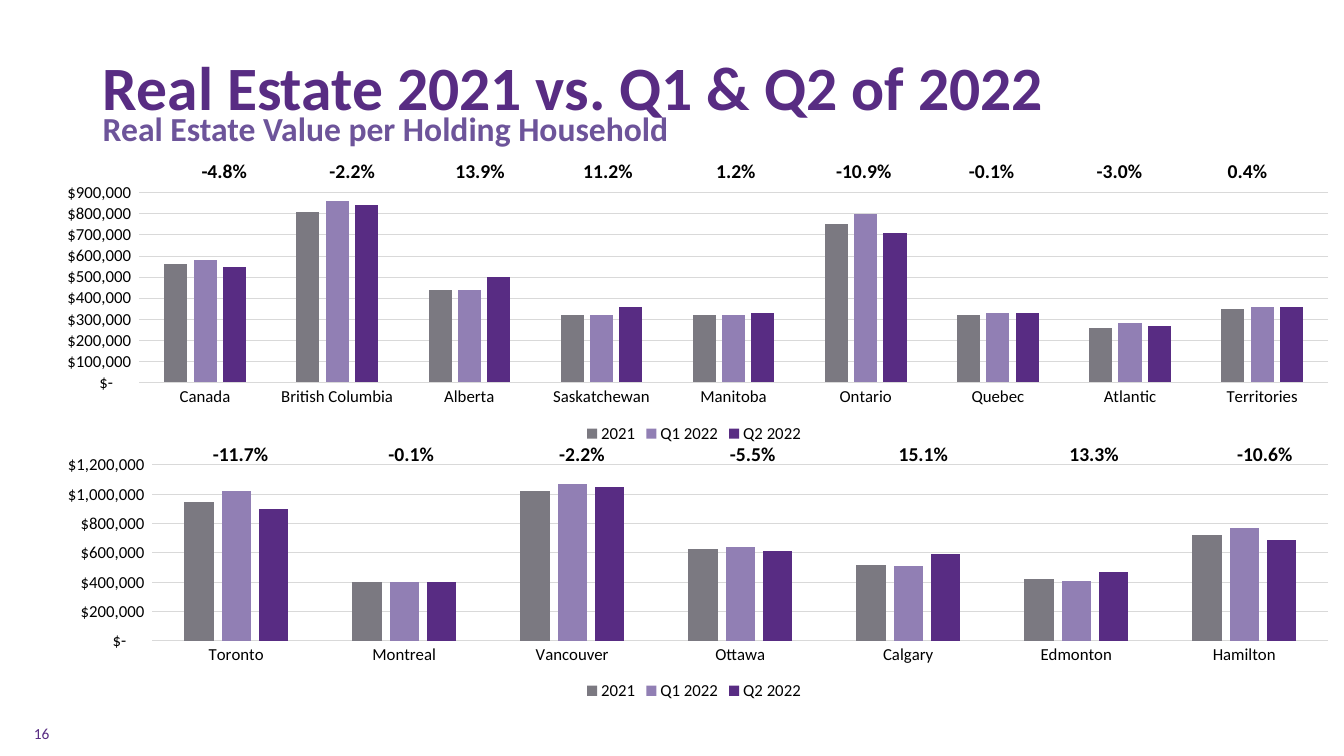
from dataclasses import dataclass

from lxml import etree
from pptx import Presentation
from pptx.chart.data import CategoryChartData
from pptx.dml.color import RGBColor
from pptx.enum.chart import XL_CHART_TYPE, XL_LEGEND_POSITION, XL_TICK_MARK
from pptx.enum.text import MSO_ANCHOR, PP_ALIGN
from pptx.oxml.ns import qn
from pptx.util import Cm, Pt

COLUMNS = XL_CHART_TYPE.COLUMN_CLUSTERED
LEGEND_BOTTOM = XL_LEGEND_POSITION.BOTTOM
NO_TICKS = XL_TICK_MARK.NONE
MIDDLE = MSO_ANCHOR.MIDDLE
LEFT, CENTER, RIGHT = PP_ALIGN.LEFT, PP_ALIGN.CENTER, PP_ALIGN.RIGHT
TITLE_ONLY = 5
PLAIN_TABLE = "{2D5ABB26-0587-4C30-8999-92F81FD0307C}"
DOLLARS = r'_-"$"* #,##0_-;\-"$"* #,##0_-;_-"$"* "-"??_-;_-@_-'


@dataclass(frozen=True)
class Theme:
    font: str = "Calibri"
    purple: str = "582C83"
    violet: str = "6D549A"
    black: str = "000000"
    grid: str = "D9D9D9"
    series: tuple = ("7B7981", "917FB4", "582C83")
    title: float = 44
    subtitle: float = 24
    change: float = 14
    chart: float = 12
    number: float = 11


@dataclass(frozen=True)
class Box:
    left: float
    top: float
    width: float
    height: float

    def lengths(self):
        return Cm(self.left), Cm(self.top), Cm(self.width), Cm(self.height)

    def inner(self, left, top, width, height):
        return Box(self.left + left, self.top + top, width, height)


@dataclass(frozen=True)
class Market:
    changes: dict
    values: dict
    maximum: int
    step: int
    plot: tuple
    strip: tuple


THEME = Theme()

REGIONS = Market(
    changes={
        "Canada": "-4.8%", "British Columbia": "-2.2%", "Alberta": "13.9%",
        "Saskatchewan": "11.2%", "Manitoba": "1.2%", "Ontario": "-10.9%",
        "Quebec": "-0.1%", "Atlantic": "-3.0%", "Territories": "0.4%",
    },
    values={
        "2021": (560000, 810000, 440000, 320000, 320000, 750000, 320000, 260000, 350000),
        "Q1 2022": (580000, 860000, 440000, 320000, 320000, 800000, 330000, 280000, 360000),
        "Q2 2022": (550000, 840000, 500000, 360000, 330000, 710000, 330000, 270000, 360000),
    },
    maximum=900000, step=100000,
    plot=(0.08, 0.06, 0.9, 0.7), strip=(3.2, -0.54, 29.01, 1.04),
)

CITIES = Market(
    changes={
        "Toronto": "-11.7%", "Montreal": "-0.1%", "Vancouver": "-2.2%",
        "Ottawa": "-5.5%", "Calgary": "15.1%", "Edmonton": "13.3%",
        "Hamilton": "-10.6%",
    },
    values={
        "2021": (950000, 400000, 1020000, 630000, 520000, 420000, 720000),
        "Q1 2022": (1020000, 400000, 1070000, 640000, 510000, 410000, 770000),
        "Q2 2022": (900000, 400000, 1050000, 610000, 590000, 470000, 690000),
    },
    maximum=1200000, step=200000,
    plot=(0.09, 0.06, 0.89, 0.69), strip=(3.07, -0.31, 30.12, 1.04),
)


def style_font(font, size, color, bold=False):
    font.name = THEME.font
    font.size = Pt(size)
    font.bold = bold
    font.color.rgb = RGBColor.from_string(color)


def write(frame, text, size, color, bold=False, align=LEFT):
    para = frame.paragraphs[0]
    para.alignment = align
    span = para.add_run()
    span.text = text
    style_font(span.font, size, color, bold)
    return para


def fix_plot_area(chart, fractions):
    area = chart._chartSpace.chart.plotArea
    for old in area.findall(qn("c:layout")):
        area.remove(old)
    layout = etree.Element(qn("c:layout"))
    manual = etree.SubElement(layout, qn("c:manualLayout"))
    settings = [("layoutTarget", "inner"), ("xMode", "edge"), ("yMode", "edge")]
    settings += zip("xywh", fractions)
    for name, value in settings:
        etree.SubElement(manual, qn(f"c:{name}")).set("val", str(value))
    area.insert(0, layout)


def heading(page, box):
    title = page.shapes.title
    title.left, title.top, title.width, title.height = box.inner(0, 0, 30.45, 2.36).lengths()
    title.text_frame.vertical_anchor = MIDDLE
    title.text_frame.word_wrap = True
    para = write(title.text_frame, "Real Estate 2021 vs. Q1 & Q2 of 2022",
                 THEME.title, THEME.purple, True)
    para.line_spacing = 0.9
    subtitle = page.shapes.add_textbox(*box.inner(0, 1.5, 21.44, 1.27).lengths())
    subtitle.text_frame.word_wrap = True
    write(subtitle.text_frame, "Real Estate Value per Holding Household",
          THEME.subtitle, THEME.violet, True)


def value_chart(page, box, market):
    data = CategoryChartData()
    data.categories = list(market.changes)
    for period, values in market.values.items():
        data.add_series(period, values)
    chart = page.shapes.add_chart(COLUMNS, *box.lengths(), data).chart
    style_font(chart.font, THEME.chart, THEME.black)
    chart.has_title = False
    chart.has_legend = True
    chart.legend.position = LEGEND_BOTTOM
    chart.legend.include_in_layout = False
    style_font(chart.legend.font, THEME.chart, THEME.black)
    plot = chart.plots[0]
    plot.gap_width = 219
    plot.overlap = -27
    plot.vary_by_categories = False
    for series, color in zip(plot.series, THEME.series):
        series.format.fill.solid()
        series.format.fill.fore_color.rgb = RGBColor.from_string(color)
    values, names = chart.value_axis, chart.category_axis
    for axis in (values, names):
        axis.major_tick_mark = axis.minor_tick_mark = NO_TICKS
        style_font(axis.tick_labels.font, THEME.chart, THEME.black)
    values.minimum_scale, values.maximum_scale = 0, market.maximum
    values.major_unit = market.step
    values.tick_labels.number_format = DOLLARS
    values.tick_labels.number_format_is_linked = False
    values.format.line.fill.background()
    for line in (values.major_gridlines.format.line, names.format.line):
        line.color.rgb = RGBColor.from_string(THEME.grid)
        line.width = Pt(0.75)
    fix_plot_area(chart, market.plot)


def change_strip(page, box, changes):
    table = page.shapes.add_table(1, len(changes), *box.lengths()).table
    table.first_row = table.horz_banding = False
    table._tbl.tblPr.find(qn("a:tableStyleId")).text = PLAIN_TABLE
    for column, cell, change in zip(table.columns, table.rows[0].cells, changes):
        column.width = Cm(box.width / len(changes))
        cell.fill.background()
        write(cell.text_frame, change, THEME.change, THEME.black, True, CENTER)


def market_panel(page, box, market):
    value_chart(page, box, market)
    change_strip(page, box.inner(*market.strip), market.changes.values())


def page_number(page, box):
    number = page.shapes.add_textbox(*box.lengths())
    number.text_frame.vertical_anchor = MIDDLE
    number.text_frame.word_wrap = True
    write(number.text_frame, "16", THEME.number, THEME.purple, align=RIGHT)


def main():
    deck = Presentation()
    deck.slide_width, deck.slide_height = Cm(33.87), Cm(19.05)
    page = deck.slides.add_slide(deck.slide_layouts[TITLE_ONLY])
    heading(page, Box(2.34, 1.09, 30.45, 2.77))
    market_panel(page, Box(0.84, 4.45, 33.3, 6.83), REGIONS)
    market_panel(page, Box(0.84, 11.33, 33.3, 6.43), CITIES)
    page_number(page, Box(0, 17.96, 1.5, 1.02))
    deck.save("out.pptx")


if __name__ == "__main__":
    main()
